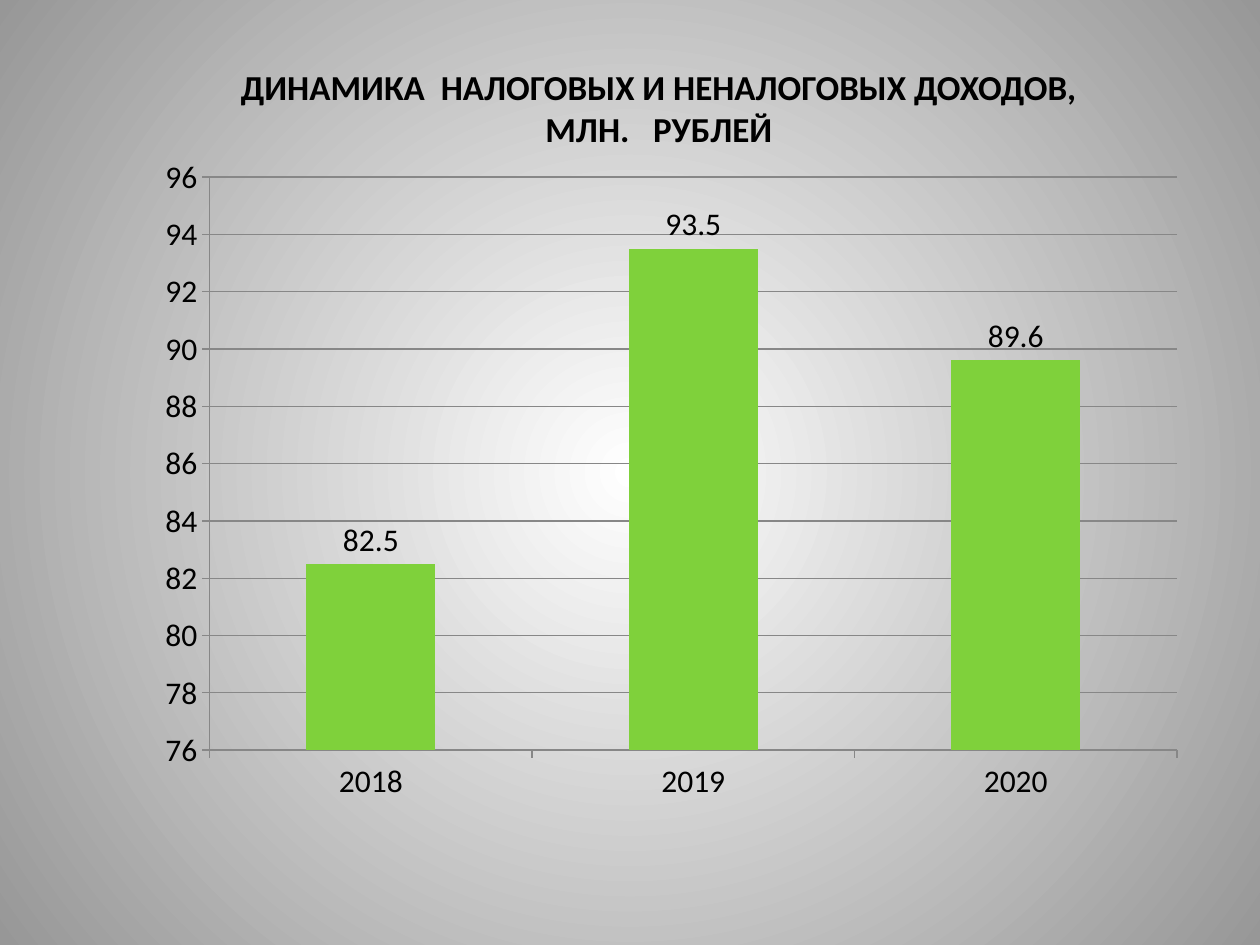
from lxml import etree
from pptx import Presentation
from pptx.chart.data import CategoryChartData
from pptx.dml.color import RGBColor
from pptx.enum import chart as charts, text
from pptx.oxml import ns, parse_xml
from pptx.util import Pt


def color(value):
    return RGBColor.from_string(value)


def write(para, words, *, size, font, fill, bold=False):
    """Centre the words in the paragraph with one format."""
    para.alignment = text.PP_ALIGN.CENTER
    para.line_spacing = 1.0
    para.space_before = Pt(0)
    span = para.add_run()
    span.text = words
    span.font.size = Pt(size)
    span.font.name = font
    span.font.bold = bold
    span.font.color.rgb = color(fill)


FONT = "Calibri"
BLACK = "000000"
GRID = "878787"

deck = Presentation()
deck.slide_width, deck.slide_height = Pt(720), Pt(540)
page = deck.slides.add_slide(deck.slide_layouts[5])

# Background: white centre fading to grey in circles
backdrop = page.background.fill
backdrop.gradient()
for stop, position, shade in zip(backdrop.gradient_stops, (0, 1), ("FFFFFF", "979797")):
    stop.position = position
    stop.color.rgb = color(shade)
gradient = page.background._cSld.find(".//" + ns.qn("a:gradFill"))
linear = gradient.find(ns.qn("a:lin"))
circle = etree.Element(ns.qn("a:path"), path="circle")
etree.SubElement(circle, ns.qn("a:fillToRect"),
                 {side: "50000" for side in "ltrb"})
gradient.replace(linear, circle)

# Revenue chart
data = CategoryChartData()
data.categories = ["2018", "2019", "2020"]
data.add_series("Series 1", (82.5, 93.5, 89.6))
chart = page.shapes.add_chart(
    charts.XL_CHART_TYPE.COLUMN_CLUSTERED,
    Pt(33.84), Pt(78.48), Pt(646.56), Pt(405.36), data).chart
chart.has_legend = False
chart.has_title = False
chart.font.size = Pt(18)
chart.font.name = FONT
chart.font.color.rgb = color(BLACK)

plot = chart.plots[0]
plot.gap_width = 150
plot.vary_by_categories = False
revenue = plot.series[0]
revenue.format.fill.solid()
revenue.format.fill.fore_color.rgb = color("7FD13B")
labels = revenue.data_labels
labels.show_value = True
labels.position = charts.XL_LABEL_POSITION.OUTSIDE_END

values = chart.value_axis
values.minimum_scale, values.maximum_scale, values.major_unit = 76, 96, 2
values.has_major_gridlines = True
for axis in (chart.category_axis, values):
    axis.major_tick_mark = charts.XL_TICK_MARK.OUTSIDE
for part in (chart.category_axis, values, values.major_gridlines):
    part.format.line.color.rgb = color(GRID)
    part.format.line.width = Pt(0.75)

# Fixed inner plot area, as fractions of the chart
area = chart._chartSpace.find(".//" + ns.qn("c:plotArea"))
for old in area.findall(ns.qn("c:layout")):
    area.remove(old)
layout = parse_xml(f"<c:layout {ns.nsdecls('c')}><c:manualLayout/></c:layout>")
settings = {"layoutTarget": "inner", "xMode": "edge", "yMode": "edge",
            "x": 0.133, "y": 0.056, "w": 0.855, "h": 0.808}
for name, value in settings.items():
    etree.SubElement(layout[0], ns.qn("c:" + name), val=str(value))
area.insert(0, layout)

# Title
title = page.shapes.title
title.left, title.top, title.width, title.height = Pt(112.32), Pt(33.84), Pt(528.48), Pt(55.44)
frame = title.text_frame
frame.word_wrap = True
frame.auto_size = text.MSO_AUTO_SIZE.NONE
frame.vertical_anchor = text.MSO_ANCHOR.TOP
lines = ("ДИНАМИКА  НАЛОГОВЫХ И НЕНАЛОГОВЫХ ДОХОДОВ,", "МЛН.   РУБЛЕЙ")
for number, line in enumerate(lines):
    para = frame.add_paragraph() if number else frame.paragraphs[0]
    write(para, line, size=20, font=FONT, fill=BLACK, bold=True)

deck.save("out.pptx")
